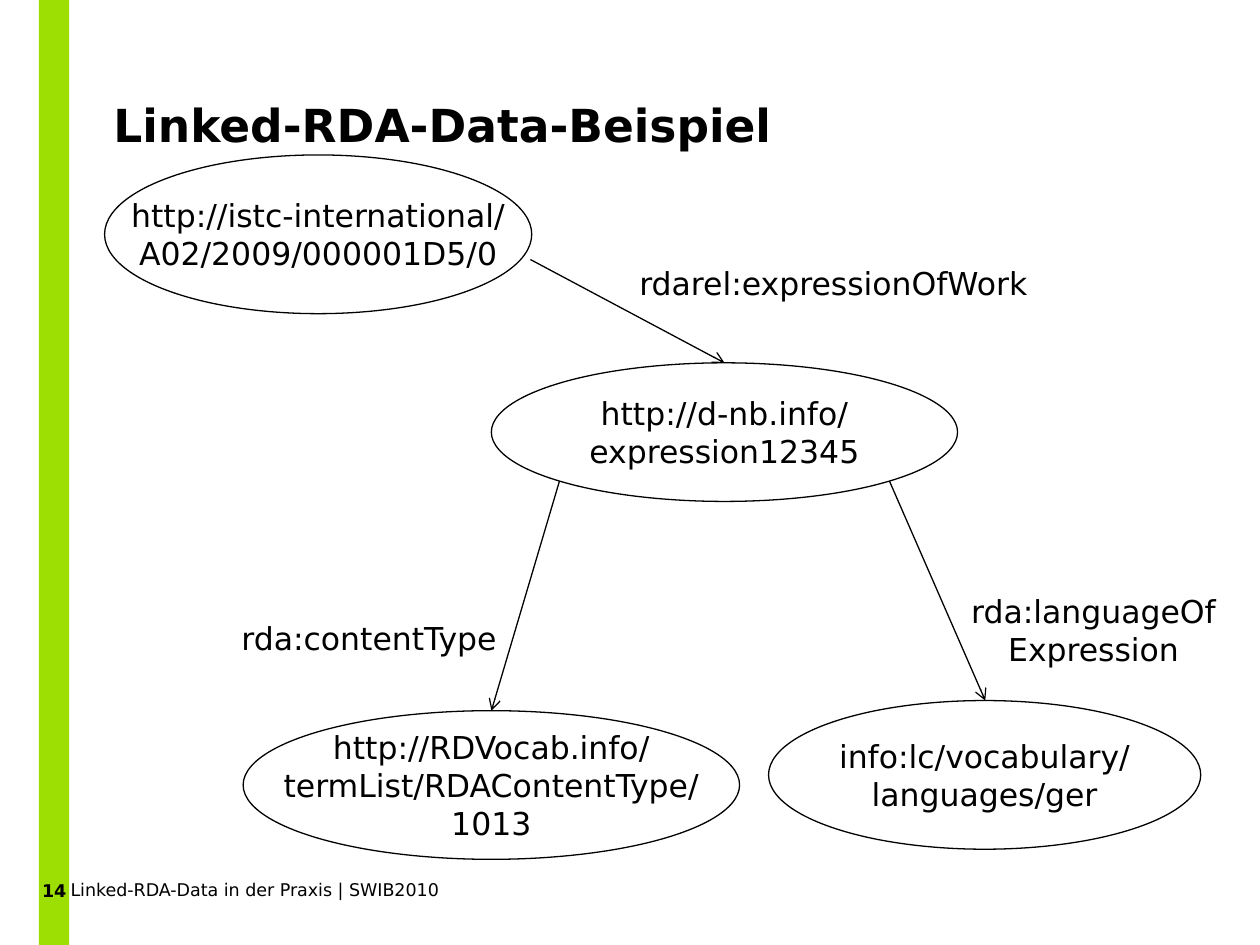
from lxml import etree
from pptx import Presentation
from pptx.dml.color import RGBColor
from pptx.enum.shapes import MSO_CONNECTOR, MSO_SHAPE
from pptx.enum.text import MSO_ANCHOR, PP_ALIGN
from pptx.oxml.ns import qn
from pptx.util import Inches, Pt

GREEN = RGBColor(0x9E, 0xDF, 0x03)
BLACK = RGBColor(0, 0, 0)
WHITE = RGBColor(0xFF, 0xFF, 0xFF)
FONT = "DejaVu Sans"
NO_MARGINS = (0, 0, 0, 0)

RESOURCES = [
    ("http://istc-international/\vA02/2009/000001D5/0", (0.83, 1.23, 3.39, 1.26)),
    ("http://d-nb.info/\nexpression12345", (3.9, 2.88, 3.7, 1.1)),
    ("http://RDVocab.info/\vtermList/RDAContentType/\v1013", (1.93, 5.64, 3.94, 1.18)),
    ("info:lc/vocabulary/\vlanguages/ger", (6.1, 5.56, 3.43, 1.18)),
]
PROPERTIES = [
    ("rdarel:expressionOfWork", (5, 1.94, 3.23, 0.61), (4.21, 2.06), (5.75, 2.88)),
    ("rda:contentType", (1.55, 4.76, 2.76, 0.61), (4.44, 3.82), (3.9, 5.64)),
    ("rda:languageOf\vExpression", (7.38, 4.62, 2.6, 0.76), (7.06, 3.82), (7.82, 5.56)),
]


def inches(lengths):
    return [Inches(length) for length in lengths]


def write(frame, text, size, bold=False, align=PP_ALIGN.CENTER,
          anchor=MSO_ANCHOR.MIDDLE, margins=None, wrap=False):
    frame.word_wrap = wrap
    frame.vertical_anchor = anchor
    if margins:
        (frame.margin_left, frame.margin_top,
         frame.margin_right, frame.margin_bottom) = inches(margins)
    frame.text = text
    for paragraph in frame.paragraphs:
        paragraph.alignment = align
        paragraph.font.name = FONT
        paragraph.font.size = Pt(size)
        paragraph.font.bold = bold
        paragraph.font.color.rgb = BLACK


def add_page_bar(slide, box, number):
    bar = slide.shapes.add_shape(MSO_SHAPE.RECTANGLE, *inches(box))
    bar.shadow.inherit = False
    bar.fill.solid()
    bar.fill.fore_color.rgb = GREEN
    bar.line.fill.background()
    write(bar.text_frame, number, 10, bold=True,
          anchor=MSO_ANCHOR.BOTTOM, margins=(0, 0.05, 0, 0.35))


def place_title(slide, box, text):
    title = slide.shapes.title
    title.left, title.top, title.width, title.height = inches(box)
    write(title.text_frame, text, 26, bold=True, align=PP_ALIGN.LEFT,
          anchor=MSO_ANCHOR.TOP, margins=NO_MARGINS, wrap=True)
    title.text_frame.paragraphs[0].line_spacing = Pt(30)


def add_resource(slide, box, uri):
    resource = slide.shapes.add_shape(MSO_SHAPE.OVAL, *inches(box))
    resource.shadow.inherit = False
    resource.fill.solid()
    resource.fill.fore_color.rgb = WHITE
    resource.line.color.rgb = BLACK
    resource.line.width = Pt(0.75)
    write(resource.text_frame, uri, 18)


def add_property(slide, box, name, start, end):
    arrow = slide.shapes.add_connector(MSO_CONNECTOR.STRAIGHT, *inches(start + end))
    arrow.line.color.rgb = BLACK
    arrow.line.width = Pt(0.75)
    etree.SubElement(arrow.line._get_or_add_ln(), qn("a:tailEnd"), type="arrow")
    etree.SubElement(arrow._element.spPr, qn("a:effectLst"))
    label = slide.shapes.add_textbox(*inches(box))
    write(label.text_frame, name, 18, margins=NO_MARGINS)


def add_footer(slide, box, text):
    footer = slide.shapes.add_textbox(*inches(box))
    write(footer.text_frame, text, 10, align=PP_ALIGN.LEFT,
          anchor=MSO_ANCHOR.TOP, margins=NO_MARGINS, wrap=True)


def main():
    presentation = Presentation()
    presentation.slide_width = Inches(10)
    presentation.slide_height = Inches(7.5)
    slide = presentation.slides.add_slide(presentation.slide_layouts[5])
    add_page_bar(slide, (0.31, 0, 0.24, 7.5), "14")
    place_title(slide, (0.9, 0.79, 7.32, 0.93), "Linked-RDA-Data-Beispiel")
    for uri, box in RESOURCES:
        add_resource(slide, box, uri)
    for name, box, start, end in PROPERTIES:
        add_property(slide, box, name, start, end)
    add_footer(slide, (0.56, 6.98, 8.61, 0.17), "Linked-RDA-Data in der Praxis | SWIB2010")
    presentation.save("out.pptx")


if __name__ == "__main__":
    main()
